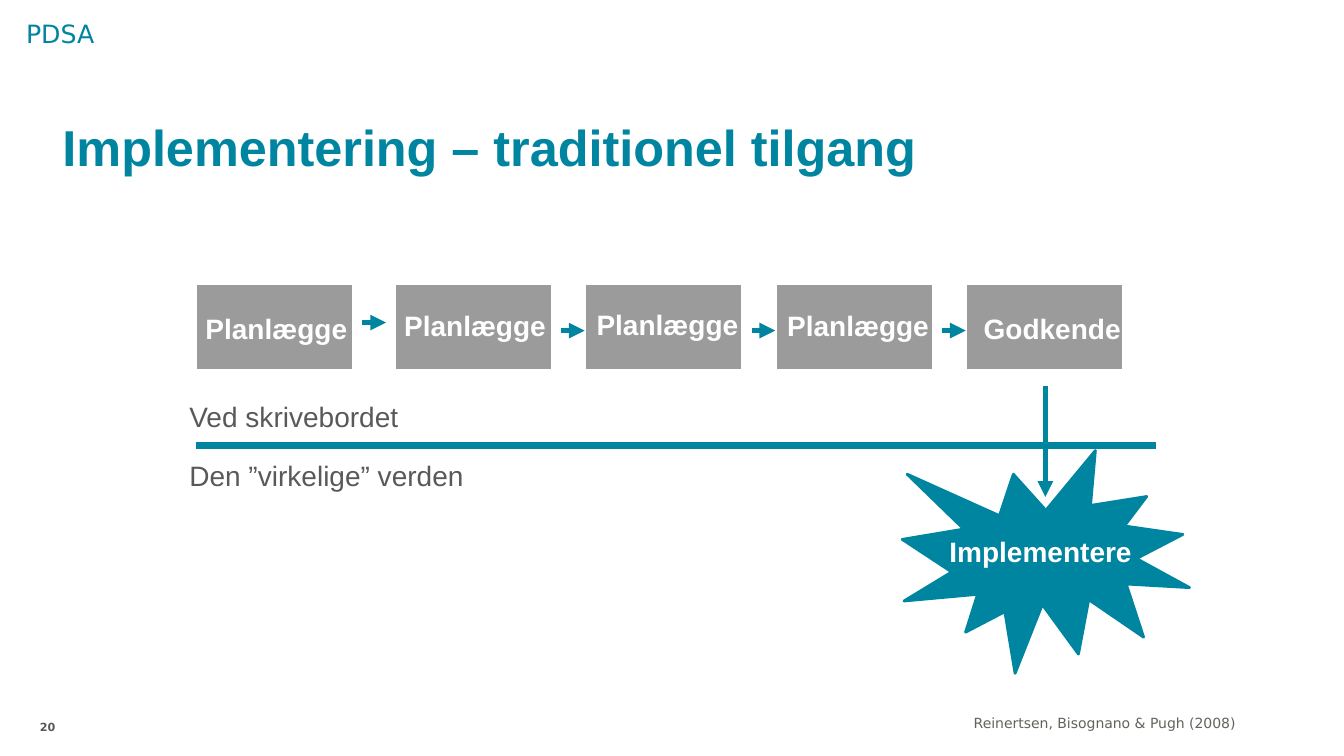
"""Builds the slide on the traditional approach to implementation."""
from dataclasses import dataclass

from lxml.etree import SubElement
from pptx import Presentation
from pptx.dml.color import RGBColor
from pptx.enum.shapes import MSO_CONNECTOR as CONN, MSO_SHAPE as SHAPE
from pptx.enum.text import MSO_ANCHOR as ANCHOR, PP_ALIGN as ALIGN
from pptx.oxml.ns import qn
from pptx.util import Inches, Pt


@dataclass(frozen=True)
class Theme:
    """Colours, fonts and type sizes."""
    teal: str = "0085A0"
    title_teal: str = "0085A1"
    grey: str = "9B9B9B"
    text: str = "595959"
    source: str = "62645B"
    white: str = "FFFFFF"
    sans: str = "Arial"
    small_sans: str = "DejaVu Sans"
    title_size: int = 36
    label_size: int = 20
    header_size: int = 18
    source_size: int = 10
    number_size: int = 8


class Deck:
    """Draws on the current slide, with lengths in percent of its size."""

    def __init__(self, theme):
        self.t = theme
        self.prs = Presentation()
        self.prs.slide_width = Inches(13.33)
        self.prs.slide_height = Inches(7.5)
        self.s = self.prs.slides.add_slide(self.prs.slide_layouts[6])

    def place(self, *lengths):
        """Turns alternating horizontal and vertical shares into lengths."""
        sides = (self.prs.slide_width, self.prs.slide_height)
        return [round(v * sides[i % 2] / 100) for i, v in enumerate(lengths)]

    def shape(self, kind, at, fill, line):
        """Adds a filled preset shape."""
        sp = self.s.shapes.add_shape(kind, *self.place(*at))
        sp.shadow.inherit = False
        sp.fill.solid()
        sp.fill.fore_color.rgb = RGBColor.from_string(fill)
        sp.line.color.rgb = RGBColor.from_string(line)
        sp.line.width = Pt(2)

    def line(self, start, end, width, arrow=True):
        """Adds a straight line, with an arrowhead unless told otherwise."""
        c = self.s.shapes.add_connector(CONN.STRAIGHT, *self.place(*start, *end))
        c.line.color.rgb = RGBColor.from_string(self.t.teal)
        c.line.width = Pt(width)
        if arrow:
            SubElement(c.line._get_or_add_ln(), qn("a:tailEnd"), type="triangle")
        SubElement(c._element.spPr, qn("a:effectLst"))

    def text(self, text, at, size, color, font=None, bold=False, wrap=True,
             inset=True, anchor=ANCHOR.TOP, align=ALIGN.LEFT, spacing=None):
        """Adds a text box with one paragraph."""
        tf = self.s.shapes.add_textbox(*self.place(*at)).text_frame
        tf.text = text
        tf.word_wrap = wrap
        tf.vertical_anchor = anchor
        if not inset:
            tf.margin_left = tf.margin_right = tf.margin_top = tf.margin_bottom = 0
        p = tf.paragraphs[0]
        p.alignment = align
        p.line_spacing = spacing
        r = p.runs[0]
        r.font.size = Pt(size)
        r.font.name = font or self.t.sans
        r.font.bold = bold
        r.font.color.rgb = RGBColor.from_string(color)

    def label(self, text, x, y, w, color, bold=True):
        """Adds a one-line diagram label."""
        self.text(text, (x, y, w, 5.87), self.t.label_size, color,
                  bold=bold, wrap=False)


STEPS = [
    ("Planlægge", 14.55, 14.55, 40.53, 12.15),
    ("Planlægge", 29.33, 29.33, 40.13, 12.38),
    ("Planlægge", 43.5, 43.65, 40, 12.15),
    ("Planlægge", 57.68, 57.83, 40.13, 12.15),
    ("Godkende", 71.85, 72.45, 40.53, 11.78),
]
ARROWS = [(28.73, 42.67), *((box_x, 43.73) for _, box_x, *_ in STEPS[2:])]


def main():
    """Builds and saves the slide."""
    t = Theme()
    d = Deck(t)
    d.text("PDSA", (1.2, 1.73, 50.03, 5.33), t.header_size, t.teal, t.small_sans)
    d.text("Implementering – traditionel tilgang", (4.65, 13.07, 91.2, 10.4),
           t.title_size, t.title_teal, bold=True, inset=False,
           anchor=ANCHOR.BOTTOM, spacing=0.9)

    for name, box_x, text_x, text_y, text_w in STEPS:
        d.shape(SHAPE.RECTANGLE, (box_x, 37.47, 11.78, 11.6), t.grey, t.white)
        d.label(name, text_x, text_y, text_w, t.white)
    for tip_x, y in ARROWS:
        d.line((tip_x - 1.76, y), (tip_x, y), 3.75)

    d.line((14.55, 58.93), (86.03, 58.93), 4.75, arrow=False)
    d.label("Ved skrivebordet", 13.35, 52.13, 17.18, t.text, bold=False)
    d.label("Den ”virkelige” verden", 13.35, 60, 22.43, t.text, bold=False)

    d.shape(SHAPE.EXPLOSION1, (67.13, 59.6, 21.38, 29.47), t.teal, t.teal)
    d.label("Implementere", 69.9, 70, 15.15, t.white)
    d.line((77.78, 51.07), (77.78, 65.73), 3.75)

    d.text("Reinertsen, Bisognano & Pugh (2008)", (72.45, 94.53, 21.38, 3.33),
           t.source_size, t.source, t.small_sans, inset=False)
    d.text("20", (1.2, 95.33, 2.93, 4.67), t.number_size, t.text, t.small_sans,
           bold=True, inset=False, align=ALIGN.RIGHT)
    d.prs.save("out.pptx")


if __name__ == "__main__":
    main()
